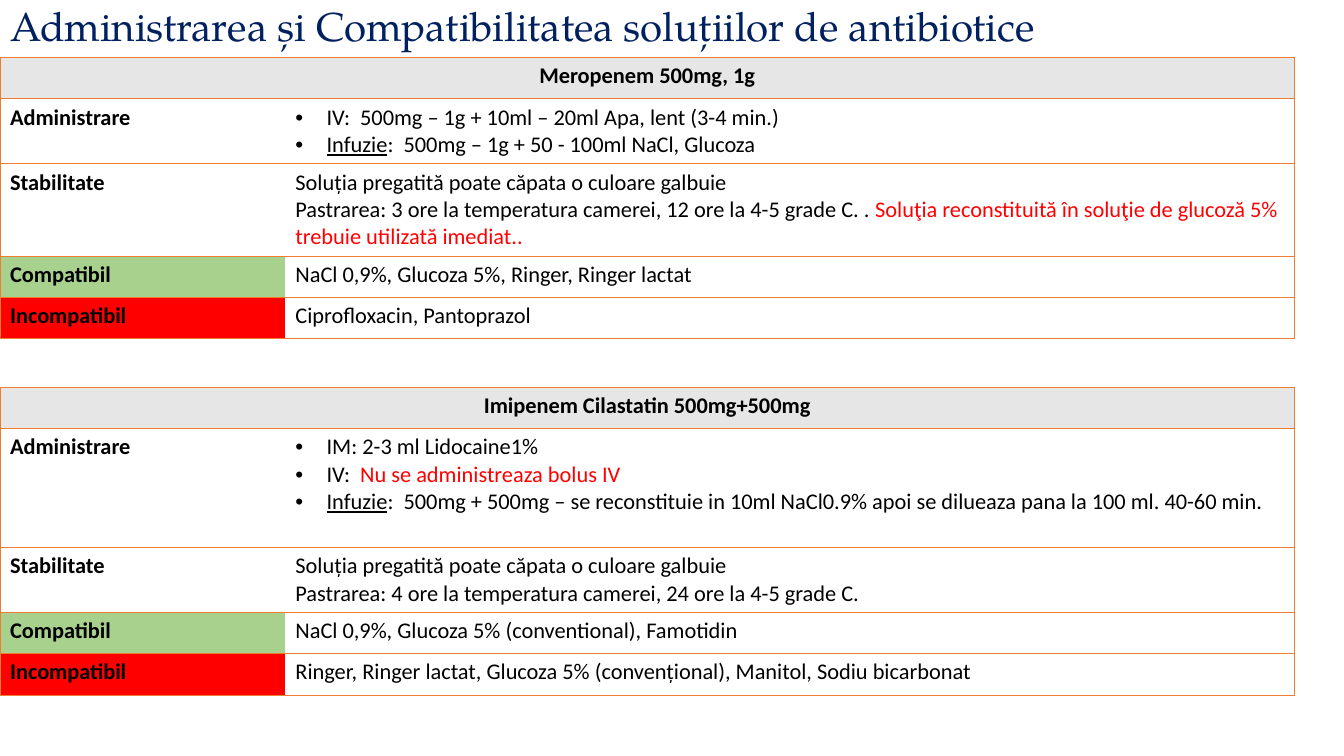
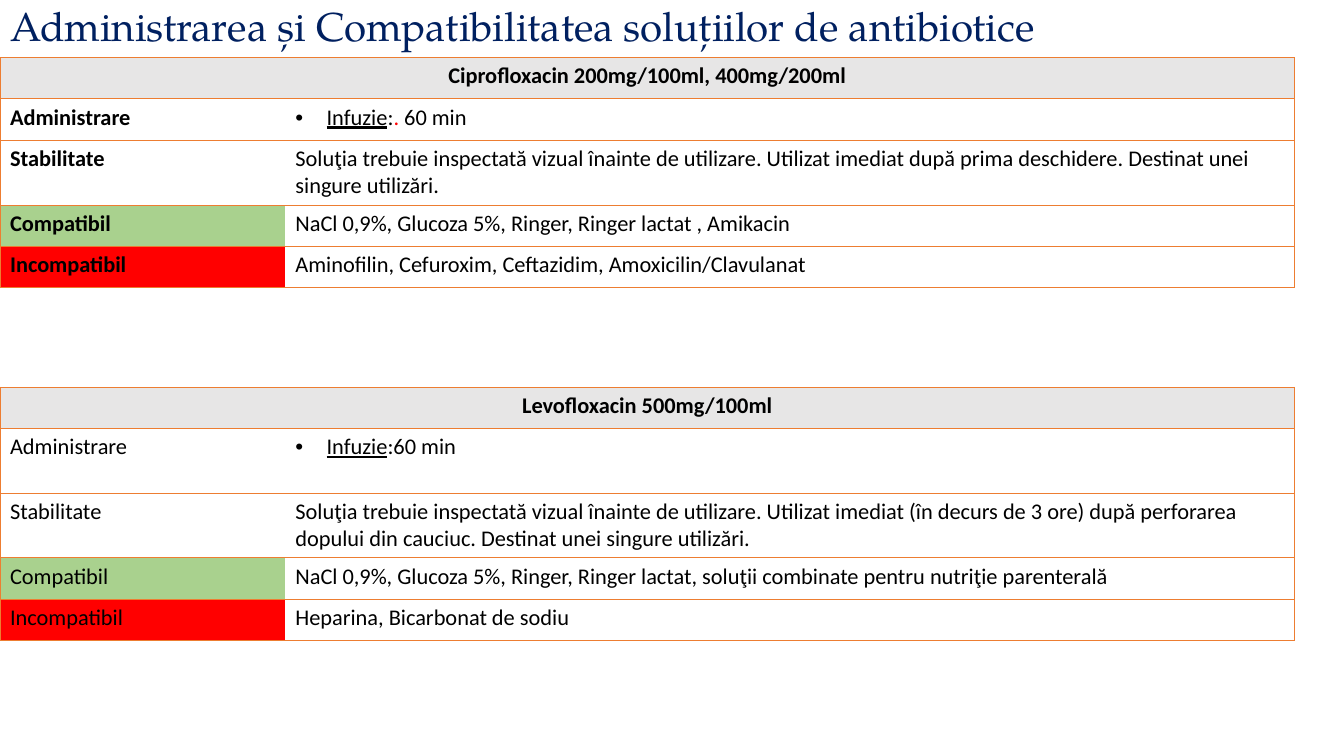
"""Build two slides of antibiotic administration and compatibility tables."""
from lxml.etree import SubElement
from pptx import Presentation
from pptx.dml.color import RGBColor
from pptx.enum.text import MSO_ANCHOR, MSO_AUTO_SIZE, PP_ALIGN
from pptx.oxml import parse_xml
from pptx.oxml.ns import nsdecls, qn
from pptx.util import Inches, Pt

COLORS = {
    "title": "002060",
    "text": "000000",
    "warning": "FF0000",
    "header": "E7E6E6",
    "plain": "FFFFFF",
    "compatible": "A9D18E",
    "incompatible": "FF0000",
    "border": "ED7D31",
}
TITLE = "Administrarea și Compatibilitatea soluțiilor de antibiotice"
LABELS = ["Administrare", "Stabilitate", "Compatibil", "Incompatibil"]
LABEL_FILLS = ["plain", "plain", "compatible", "incompatible"]
TABLE_TOPS = [0.57, 3.84]
COLUMN_WIDTHS = [2.83, 10.01]
MIN_ROW, LINE_HEIGHT, CELL_MARGINS = 0.41, 0.27, 0.1
INDENT = 0.31

INFUSION = ("Infuzie", "underline")
COLOR_CHANGE = [("Soluția pregatită poate căpata o culoare galbuie", "")]

SLIDES = [
    [
        {
            "drug": "Meropenem 500mg, 1g",
            "bold_labels": True,
            "lines": [2, 3, 1, 1],
            "details": [
                [
                    [("IV:  500mg – 1g + 10ml – 20ml Apa, lent (3-4 min.)", "")],
                    [INFUSION, (":  500mg – 1g + 50 - 100ml NaCl, Glucoza", "")],
                ],
                [
                    COLOR_CHANGE,
                    [
                        ("Pastrarea: 3 ore la temperatura camerei, 12 ore la 4-5 grade C. . ", ""),
                        ("Soluţia reconstituită în soluţie de glucoză 5% trebuie utilizată imediat..", "warning"),
                    ],
                ],
                [[("NaCl 0,9%, Glucoza 5%, Ringer, Ringer lactat", "")]],
                [[("Ciprofloxacin, Pantoprazol", "")]],
            ],
        },
        {
            "drug": "Imipenem Cilastatin 500mg+500mg",
            "bold_labels": True,
            "lines": [4, 2, 1, 1],
            "details": [
                [
                    [("IM: 2-3 ml Lidocaine1%", "")],
                    [("IV:  ", ""), ("Nu se administreaza bolus IV", "warning")],
                    [
                        INFUSION,
                        (":  500mg + 500mg – se reconstituie in 10ml NaCl0.9% apoi se dilueaza "
                         "pana la 100 ml. 40-60 min.", ""),
                    ],
                ],
                [
                    COLOR_CHANGE,
                    [("Pastrarea: 4 ore la temperatura camerei, 24 ore la 4-5 grade C.", "")],
                ],
                [[("NaCl 0,9%, Glucoza 5% (conventional), Famotidin", "")]],
                [[("Ringer, Ringer lactat, Glucoza 5% (convențional), Manitol, Sodiu bicarbonat", "")]],
            ],
        },
    ],
    [
        {
            "drug": "Ciprofloxacin 200mg/100ml, 400mg/200ml",
            "bold_labels": True,
            "lines": [1, 2, 1, 1],
            "details": [
                [[INFUSION, (":", ""), (". ", "warning"), ("60 min", "")]],
                [[("Soluţia trebuie inspectată vizual înainte de utilizare. Utilizat imediat după "
                   "prima deschidere. Destinat unei singure utilizări.", "")]],
                [[("NaCl 0,9%, Glucoza 5%, Ringer, Ringer lactat , Amikacin", "")]],
                [[("Aminofilin, Cefuroxim, Ceftazidim, Amoxicilin/Clavulanat", "")]],
            ],
        },
        {
            "drug": "Levofloxacin 500mg/100ml",
            "bold_labels": False,
            "lines": [2, 2, 1, 1],
            "details": [
                [[INFUSION, (":60 min", "")]],
                [[("Soluţia trebuie inspectată vizual înainte de utilizare. Utilizat imediat (în decurs "
                   "de 3 ore) după perforarea dopului din cauciuc. Destinat unei singure utilizări.", "")]],
                [[("NaCl 0,9%, Glucoza 5%, Ringer, Ringer lactat, soluţii combinate pentru "
                   "nutriţie parenterală", "")]],
                [[("Heparina, Bicarbonat de sodiu", "")]],
            ],
        },
    ],
]


def add_run(paragraph, text, size=16, font="Calibri", color="text", bold=False, underline=False):
    run = paragraph.add_run()
    run.text = text
    run.font.size = Pt(size)
    run.font.name = font
    run.font.bold = bold
    run.font.underline = underline
    run.font.color.rgb = RGBColor.from_string(COLORS[color])


def style_cell(cell, fill, visible_sides):
    cell.fill.solid()
    cell.fill.fore_color.rgb = RGBColor.from_string(COLORS[fill])
    properties = cell._tc.get_or_add_tcPr()
    for position, side in enumerate("LRTB"):
        paint = f'<a:solidFill><a:srgbClr val="{COLORS["border"]}"/></a:solidFill>'
        if side not in visible_sides:
            paint = "<a:noFill/>"
        border = f'<a:ln{side} {nsdecls("a")} w="{Pt(0.5)}">{paint}</a:ln{side}>'
        properties.insert(position, parse_xml(border))


prs = Presentation()
prs.slide_width, prs.slide_height = Inches(13.33), Inches(7.5)

for antibiotics in SLIDES:
    slide = prs.slides.add_slide(prs.slide_layouts[5])
    heading = slide.shapes.title
    heading.left, heading.top = Inches(0), Inches(0)
    heading.width, heading.height = Inches(11.5), Inches(0.57)
    heading.text_frame.auto_size = MSO_AUTO_SIZE.NONE
    heading.text_frame.vertical_anchor = MSO_ANCHOR.MIDDLE
    heading_line = heading.text_frame.paragraphs[0]
    heading_line.alignment = PP_ALIGN.LEFT
    heading_line.line_spacing = 0.9
    add_run(heading_line, TITLE, 28.8, "TeX Gyre Pagella", "title")

    for top, antibiotic in zip(TABLE_TOPS, antibiotics):
        heights = [max(MIN_ROW, CELL_MARGINS + LINE_HEIGHT * lines) for lines in [1] + antibiotic["lines"]]
        table = slide.shapes.add_table(
            len(heights), 2, Inches(0), Inches(top), Inches(sum(COLUMN_WIDTHS)), Inches(sum(heights))
        ).table
        table.first_row = table.horz_banding = False
        for column, width in zip(table.columns, COLUMN_WIDTHS):
            column.width = Inches(width)
        for row, height in zip(table.rows, heights):
            row.height = Inches(height)

        drug_cell = table.cell(0, 0)
        drug_cell.merge(table.cell(0, 1))
        style_cell(drug_cell, "header", "LRTB")
        drug_line = drug_cell.text_frame.paragraphs[0]
        drug_line.alignment = PP_ALIGN.CENTER
        add_run(drug_line, antibiotic["drug"], bold=True)

        rows = zip(LABELS, LABEL_FILLS, antibiotic["details"])
        for row_number, (label, label_fill, details) in enumerate(rows, start=1):
            label_cell, detail_cell = table.cell(row_number, 0), table.cell(row_number, 1)
            style_cell(label_cell, label_fill, "LTB")
            style_cell(detail_cell, "plain", "RTB")
            add_run(label_cell.text_frame.paragraphs[0], label, bold=antibiotic["bold_labels"])

            for index, runs in enumerate(details):
                frame = detail_cell.text_frame
                detail = frame.add_paragraph() if index else frame.paragraphs[0]
                if label == "Administrare":
                    bullet = detail._p.get_or_add_pPr()
                    bullet.set("marL", str(Inches(INDENT)))
                    bullet.set("indent", str(-Inches(INDENT)))
                    SubElement(bullet, qn("a:buFont")).set("typeface", "Arial")
                    SubElement(bullet, qn("a:buChar")).set("char", "•")
                for text, style in runs:
                    color = "warning" if style == "warning" else "text"
                    add_run(detail, text, color=color, underline=style == "underline")

prs.save("out.pptx")
